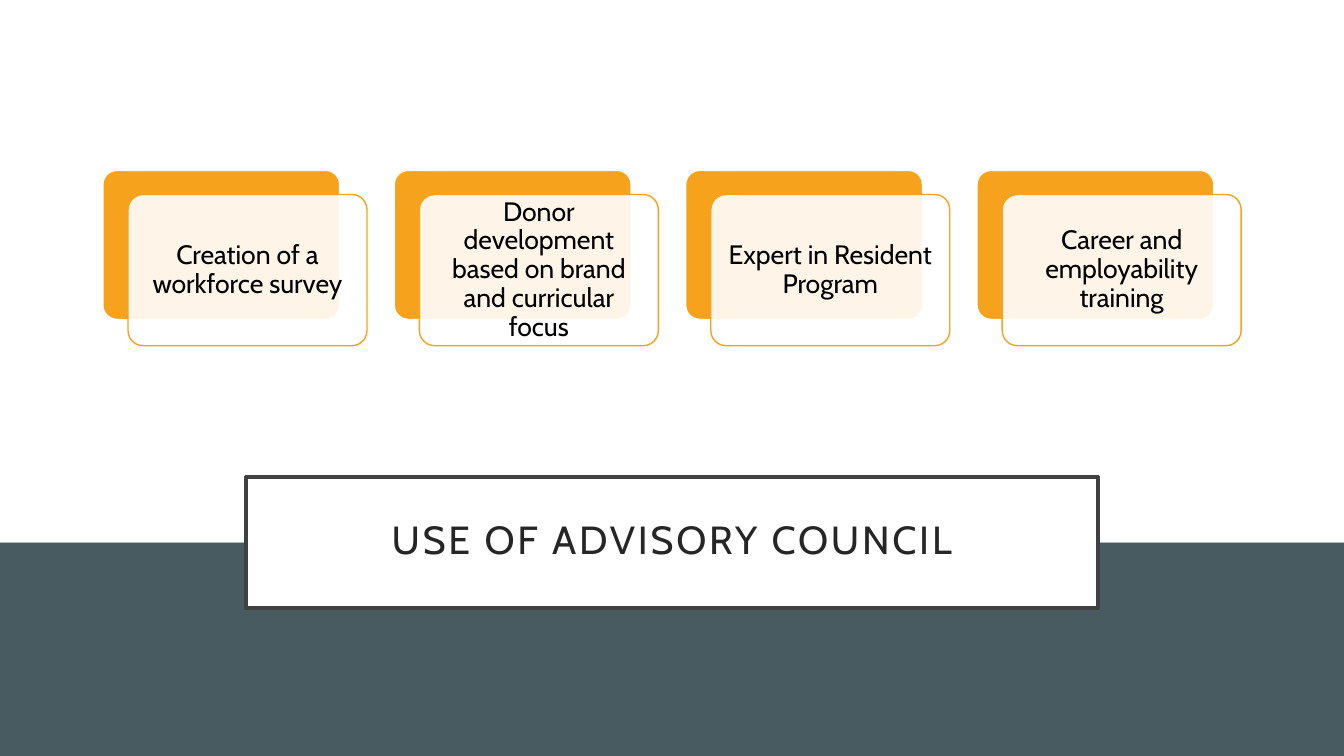
from dataclasses import dataclass

from pptx import Presentation
from pptx.dml.color import RGBColor
from pptx.enum.shapes import MSO_SHAPE
from pptx.enum.text import MSO_ANCHOR, MSO_AUTO_SIZE, PP_ALIGN
from pptx.oxml.ns import qn
from pptx.shapes.autoshape import Shape
from pptx.slide import Slide
from pptx.util import Inches, Pt
from lxml.etree import SubElement

FONT = "Cabin"
COLORS = {
    "white": "FFFFFF",
    "slate": "475B61",
    "orange": "F6A21D",
    "frame": "404040",
    "heading": "262626",
    "text": "000000",
}

# Grid of the cards, in inches
SLIDE_WIDTH, SLIDE_HEIGHT = 13.33, 7.5
BAND_TOP = 5.38
CARD_LEFT, CARD_TOP = 1.01, 1.68
CARD_WIDTH, CARD_HEIGHT = 2.37, 1.5
CARD_STEP = 2.89
FRONT_SHIFT_X, FRONT_SHIFT_Y = 0.26, 0.25

CARD_TEXTS = (
    "Creation of a workforce survey",
    "Donor development based on brand and curricular focus",
    "Expert in Resident Program",
    "Career and employability training",
)


@dataclass(frozen=True)
class Box:
    left: float
    top: float
    width: float
    height: float


@dataclass(frozen=True)
class TextStyle:
    size: float
    color: str
    inset: float
    spacing: int = 0


TITLE_STYLE = TextStyle(28, "heading", 0.2, 200)
CARD_STYLE = TextStyle(19, "text", 0.08)


def rgb(name: str) -> RGBColor:
    return RGBColor.from_string(COLORS[name])


def paint(shape: Shape, fill: str, line: str = "", width: float = 0) -> None:
    shape.fill.solid()
    shape.fill.fore_color.rgb = rgb(fill)
    if line:
        shape.line.color.rgb = rgb(line)
        shape.line.width = Pt(width)
    else:
        shape.line.fill.background()


def add_box(page: Slide, kind: MSO_SHAPE, box: Box) -> Shape:
    shape = page.shapes.add_shape(
        kind, Inches(box.left), Inches(box.top), Inches(box.width), Inches(box.height)
    )
    shape.shadow.inherit = False
    if kind == MSO_SHAPE.ROUNDED_RECTANGLE:
        shape.adjustments[0] = 0.1
    return shape


def set_alpha(shape: Shape, percent: int) -> None:
    color = shape.fill._xPr.find(qn("a:solidFill"))[0]
    SubElement(color, qn("a:alpha")).set("val", str(percent * 1000))


def write(shape: Shape, text: str, style: TextStyle) -> None:
    frame = shape.text_frame
    inset = Inches(style.inset)
    frame_format = {
        "word_wrap": True,
        "auto_size": MSO_AUTO_SIZE.NONE,
        "vertical_anchor": MSO_ANCHOR.MIDDLE,
        "margin_left": inset,
        "margin_right": inset,
        "margin_top": inset,
        "margin_bottom": inset,
    }
    for name, value in frame_format.items():
        setattr(frame, name, value)
    para = frame.paragraphs[0]
    for name, value in {"alignment": PP_ALIGN.CENTER, "line_spacing": 0.9}.items():
        setattr(para, name, value)
    span = para.add_run()
    span.text = text
    for name, value in {"name": FONT, "size": Pt(style.size), "bold": False}.items():
        setattr(span.font, name, value)
    span.font.color.rgb = rgb(style.color)
    if style.spacing:
        span.font._element.set("spc", str(style.spacing))


def add_title(page: Slide, text: str, box: Box) -> None:
    title = page.shapes.title
    for name in ("left", "top", "width", "height"):
        setattr(title, name, Inches(getattr(box, name)))
    paint(title, "white", "frame", 2.5)
    write(title, text, TITLE_STYLE)
    # Bring the title in front of the bands
    title.element.getparent().append(title.element)


def add_card(page: Slide, column: int, text: str) -> None:
    left = CARD_LEFT + column * CARD_STEP
    back = add_box(page, MSO_SHAPE.ROUNDED_RECTANGLE,
                   Box(left, CARD_TOP, CARD_WIDTH, CARD_HEIGHT))
    paint(back, "orange", "white", 2.5)
    front = add_box(page, MSO_SHAPE.ROUNDED_RECTANGLE,
                    Box(left + FRONT_SHIFT_X, CARD_TOP + FRONT_SHIFT_Y,
                        CARD_WIDTH, CARD_HEIGHT))
    paint(front, "white", "orange", 1)
    set_alpha(front, 90)
    write(front, text, CARD_STYLE)


def main() -> None:
    deck = Presentation()
    deck.slide_width, deck.slide_height = Inches(SLIDE_WIDTH), Inches(SLIDE_HEIGHT)
    page = deck.slides.add_slide(deck.slide_layouts.get_by_name("Title Only"))

    # Background bands
    for top, bottom, color in ((BAND_TOP, SLIDE_HEIGHT, "slate"), (0, BAND_TOP, "white")):
        band = add_box(page, MSO_SHAPE.RECTANGLE, Box(0, top, SLIDE_WIDTH, bottom - top))
        paint(band, color)

    # Title across the edge of the bands
    add_title(page, "USE OF ADVISORY COUNCIL", Box(2.44, 4.73, 8.45, 1.3))

    # Row of cards
    for column, text in enumerate(CARD_TEXTS):
        add_card(page, column, text)

    deck.save("out.pptx")


if __name__ == "__main__":
    main()
